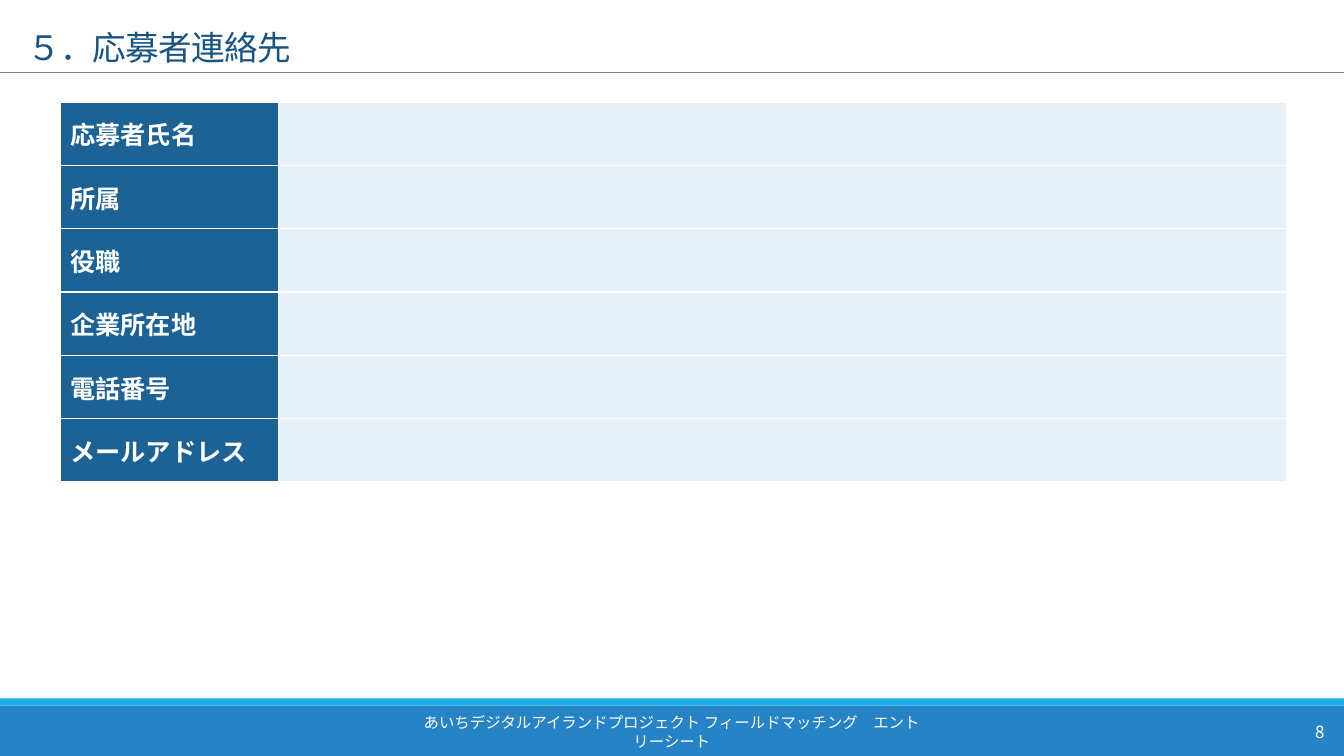
from lxml.etree import SubElement
from pptx import Presentation
from pptx.dml.color import RGBColor
from pptx.enum.shapes import MSO_CONNECTOR, MSO_SHAPE
from pptx.enum.text import MSO_ANCHOR, MSO_AUTO_SIZE, PP_ALIGN
from pptx.oxml.ns import qn
from pptx.util import Cm, Pt

FONT = "Noto Sans CJK JP"
WIDE, HIGH = 33.87, 19.05
LABELS = ["応募者氏名", "所属", "役職", "企業所在地", "電話番号", "メールアドレス"]


def color(code):
    return RGBColor.from_string(code)


def paint(target, code):
    target.fill.solid()
    target.fill.fore_color.rgb = color(code)


def style(para, size, code, align=PP_ALIGN.LEFT, bold=False):
    para.alignment = align
    font = para.font
    font.size = Pt(size)
    font.bold = bold
    font.name = FONT
    font.color.rgb = color(code)
    props = para._p.pPr.find(qn("a:defRPr"))
    SubElement(props, qn("a:ea")).set("typeface", FONT)
    return props


def add_bar(slide, left, top, width, height, code):
    bar = slide.shapes.add_shape(
        MSO_SHAPE.RECTANGLE, Cm(left), Cm(top), Cm(width), Cm(height))
    bar.shadow.inherit = False
    paint(bar, code)
    bar.line.fill.background()


def add_note(slide, left, top, width, height, text, size, align):
    box = slide.shapes.add_textbox(Cm(left), Cm(top), Cm(width), Cm(height))
    frame = box.text_frame
    frame.word_wrap = True
    frame.vertical_anchor = MSO_ANCHOR.MIDDLE
    frame.text = text
    style(frame.paragraphs[0], size, "FFFFFF", align)


def add_head(slide, left, top, width, height, text):
    inset = 0.43
    title = slide.shapes.title
    title.left, title.top = Cm(left + inset), Cm(top)
    title.width, title.height = Cm(width - inset), Cm(height)
    frame = title.text_frame
    frame.text = text
    frame.auto_size = MSO_AUTO_SIZE.NONE
    frame.vertical_anchor = MSO_ANCHOR.BOTTOM
    para = frame.paragraphs[0]
    para.line_spacing = 0.85
    style(para, 24, "195481").set("spc", "-50")
    base = Cm(top + height)
    rule = slide.shapes.add_connector(
        MSO_CONNECTOR.STRAIGHT, Cm(left), base, Cm(left + width), base)
    rule.line.color.rgb = color("808080")
    rule.line.width = Pt(0.5)
    SubElement(rule._element.spPr, qn("a:effectLst"))


def add_edges(cell):
    props = cell._tc.get_or_add_tcPr()
    for side in ("lnL", "lnR", "lnT", "lnB"):
        edge = SubElement(props, qn(f"a:{side}"), w=str(Pt(1)))
        fill = SubElement(edge, qn("a:solidFill"))
        SubElement(fill, qn("a:srgbClr"), val="FFFFFF")


def add_form(slide, left, top, width, height, labels):
    first = 5.5
    table = slide.shapes.add_table(
        len(labels), 2, Cm(left), Cm(top), Cm(width), Cm(height)).table
    table.columns[0].width = Cm(first)
    table.columns[1].width = Cm(width - first)
    for row, label in zip(table.rows, labels):
        row.height = Cm(height / len(labels))
        for cell, code in zip(row.cells, ("1D6294", "E8F1FA")):
            add_edges(cell)
            paint(cell, code)
            cell.vertical_anchor = MSO_ANCHOR.MIDDLE
        name = row.cells[0]
        name.text = label
        style(name.text_frame.paragraphs[0], 18, "FFFFFF", bold=True)


def add_foot(slide, left, top, width, height, text, page):
    strip = 0.18
    add_bar(slide, left, top + strip, width, height - strip, "2683C6")
    add_bar(slide, left, top, width, strip, "1CADE4")
    line = top + 0.33
    add_note(slide, left + 10.24, line, 13.39, 1.02, text, 11, PP_ALIGN.CENTER)
    add_note(slide, left + 30, line, 3.63, 1.02, page, 12, PP_ALIGN.RIGHT)


def main():
    deck = Presentation()
    deck.slide_width, deck.slide_height = Cm(WIDE), Cm(HIGH)
    slide = deck.slides.add_slide(deck.slide_layouts[5])
    add_head(slide, 0, 0, WIDE, 1.83, "５．応募者連絡先")
    add_form(slide, 1.52, 2.57, 30.9, 9.58, LABELS)
    add_foot(slide, 0, HIGH - 1.45, WIDE, 1.45,
             "あいちデジタルアイランドプロジェクト フィールドマッチング　エントリーシート", "8")
    deck.save("out.pptx")


if __name__ == "__main__":
    main()
